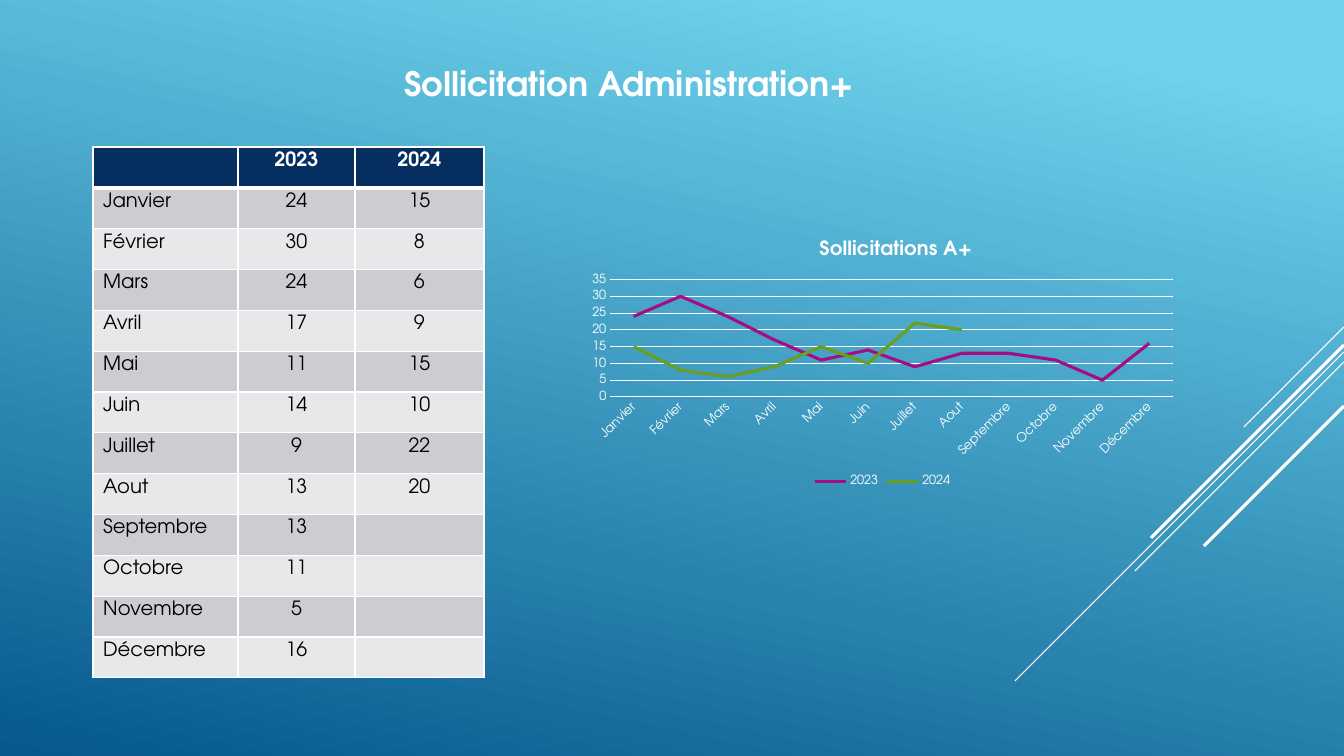
from lxml.etree import SubElement
from pptx import Presentation
from pptx.chart.data import CategoryChartData
from pptx.dml.color import RGBColor
from pptx.enum.chart import XL_CHART_TYPE as ChartType, XL_LEGEND_POSITION as LegendPosition
from pptx.enum.chart import XL_MARKER_STYLE as Marker, XL_TICK_MARK as TickMark
from pptx.enum.shapes import MSO_CONNECTOR as Connector
from pptx.enum.text import MSO_ANCHOR as Anchor, MSO_AUTO_SIZE as AutoSize, PP_ALIGN as Align
from pptx.oxml import parse_xml
from pptx.oxml.ns import nsdecls, qn
from pptx.util import Emu, Pt

SCALE = 914400 / 100.8
FONT = "TeX Gyre Adventor"
WHITE, BLACK, NAVY = "FFFFFF", "000000", "052F61"
BANDS = ["CCCDD2", "E7E8EA"]
MONTHS = ["Janvier", "Février", "Mars", "Avril", "Mai", "Juin", "Juillet", "Aout",
          "Septembre", "Octobre", "Novembre", "Décembre"]
YEARS = {
    "2023": ("A50E82", [24, 30, 24, 17, 11, 14, 9, 13, 13, 11, 5, 16]),
    "2024": ("6A9E1F", [15, 8, 6, 9, 15, 10, 22, 20] + [None] * 4),
}


def px(length):
    return Emu(round(length * SCALE))


def colour(value):
    return RGBColor.from_string(value)


def set_font(font, size, value=WHITE, bold=False):
    font.name, font.size, font.bold = FONT, Pt(size), bold
    font.color.rgb = colour(value)


def set_line(line, value, width):
    line.color.rgb = colour(value)
    line.width = Pt(width)


def paint_background(page):
    fill = page.background.fill
    fill.gradient()
    fill.gradient_angle = 360 - 102
    for stop, position, value in zip(fill.gradient_stops, (0.1, 1), ("6ED2EB", "06588E")):
        stop.position = position
        stop.color.rgb = colour(value)


def add_rays(page, right):
    """Draw 45-degree lines falling leftwards from the right edge."""
    rays = [(327, 100, 0.75), (352, 329, 0.75), (362, 209, 0.75), (345, 193, 2.25), (406, 140, 2.25)]
    for top, run, width in rays:
        ray = page.shapes.add_connector(
            Connector.STRAIGHT, px(right), px(top), px(right - run), px(top + run))
        set_line(ray.line, WHITE, width)
        SubElement(ray._element.spPr, qn("a:effectLst"))


def add_title(page, left, top, width, height):
    title = page.shapes.title
    title.left, title.top, title.width, title.height = map(px, (left, top, width, height))
    frame = title.text_frame
    frame.text = "Sollicitation Administration+"
    frame.word_wrap = True
    frame.auto_size = AutoSize.SHAPE_TO_FIT_TEXT
    frame.vertical_anchor = Anchor.MIDDLE
    para = frame.paragraphs[0]
    para.alignment = Align.LEFT
    set_font(para.font, 24, bold=True)


def set_borders(cell, top=1, bottom=1):
    sides = [("L", 1), ("R", 1), ("T", top), ("B", bottom)]
    for place, (side, width) in enumerate(sides):
        border = parse_xml(
            f'<a:ln{side} {nsdecls("a")} w="{Pt(width)}"><a:solidFill>'
            f'<a:srgbClr val="{WHITE}"/></a:solidFill></a:ln{side}>')
        cell._tc.get_or_add_tcPr().insert(place, border)


def add_month_table(page, left, top, widths, height):
    rows = [["", *YEARS], *zip(MONTHS, *(values for _, values in YEARS.values()))]
    table = page.shapes.add_table(
        len(rows), len(widths), px(left), px(top), px(sum(widths)), px(height)).table
    for column, width in zip(table.columns, widths):
        column.width = px(width)
    for r, row in enumerate(rows):
        header = r == 0
        for c, value in enumerate(row):
            cell = table.cell(r, c)
            cell.margin_top = cell.margin_bottom = px(5)
            cell.vertical_anchor = Anchor.TOP
            cell.fill.solid()
            cell.fill.fore_color.rgb = colour(NAVY if header else BANDS[(r - 1) % 2])
            set_borders(cell, top=3 if r == 1 else 1, bottom=3 if header else 1)
            cell.text = "" if value is None else str(value)
            para = cell.text_frame.paragraphs[0]
            para.alignment = Align.CENTER if c else Align.LEFT
            set_font(para.font, 14, WHITE if header else BLACK, bold=header)


def layout_xml(target="", **fractions):
    """Build a manual chart layout from fractions of the chart's size."""
    modes = "".join(f'<c:{axis}Mode val="edge"/>' for axis in "xy")
    sizes = "".join(f'<c:{name} val="{value:.2f}"/>' for name, value in fractions.items())
    return parse_xml(f'<c:layout {nsdecls("c")}><c:manualLayout>{target}{modes}{sizes}'
                     '</c:manualLayout></c:layout>')


def place_title(chart):
    chart.has_title = True
    frame = chart.chart_title.text_frame
    frame.text = "Sollicitations A+"
    set_font(frame.paragraphs[0].font, 14, bold=True)
    title = chart.chart_title._element
    for old in title.findall(qn("c:layout")):
        title.remove(old)
    title.find(qn("c:tx")).addnext(layout_xml(x=0.39, y=0.02))


def place_plot(chart):
    area = chart._chartSpace.chart.plotArea
    for old in area.findall(qn("c:layout")):
        area.remove(old)
    inner = '<c:layoutTarget val="inner"/>'
    area.insert(0, layout_xml(inner, x=0.05, y=0.19, w=0.93, h=0.45))


def style_axes(chart):
    months, counts = chart.category_axis, chart.value_axis
    for axis in (months, counts):
        axis.major_tick_mark = axis.minor_tick_mark = TickMark.NONE
        set_font(axis.tick_labels.font, 9)
    set_line(months.format.line, WHITE, 0.75)
    months._element.find(qn("c:txPr")).find(qn("a:bodyPr")).set("rot", str(-45 * 60000))
    counts.format.line.fill.background()
    counts.minimum_scale, counts.maximum_scale, counts.major_unit = 0, 35, 5
    counts.has_major_gridlines = True
    set_line(counts.major_gridlines.format.line, WHITE, 0.75)


def add_month_chart(page, left, top, width, height):
    data = CategoryChartData()
    data.categories = MONTHS
    for year, (_, values) in YEARS.items():
        data.add_series(year, values)
    chart = page.shapes.add_chart(
        ChartType.LINE, px(left), px(top), px(width), px(height), data).chart
    set_font(chart.font, 10)
    chart.plots[0].vary_by_categories = False
    for series, (value, _) in zip(chart.plots[0].series, YEARS.values()):
        series.smooth = False
        series.marker.style = Marker.NONE
        set_line(series.format.line, value, 2.25)
    chart.has_legend = True
    chart.legend.position = LegendPosition.BOTTOM
    chart.legend.include_in_layout = False
    set_font(chart.legend.font, 9)
    style_axes(chart)
    place_title(chart)
    place_plot(chart)


def main():
    deck = Presentation()
    deck.slide_width, deck.slide_height = px(1344), px(756)
    page = deck.slides.add_slide(deck.slide_layouts.get_by_name("Title Only"))
    paint_background(page)
    add_rays(page, 1344)
    add_title(page, 394, 58, 538, 50)
    add_month_table(page, 93, 147, [145, 117, 129], 531)
    add_month_chart(page, 580, 230, 605, 261)
    deck.save("out.pptx")


if __name__ == "__main__":
    main()
